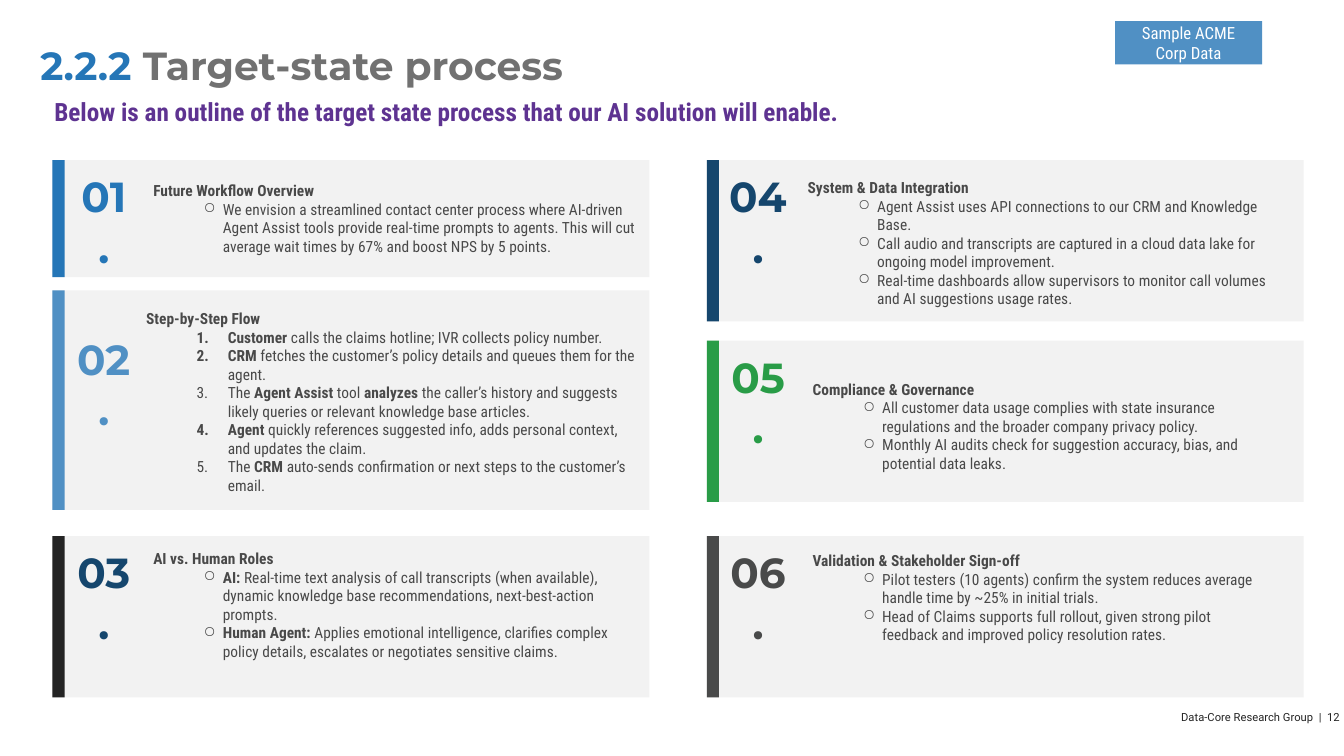
import dataclasses

import lxml.etree
import pptx
import pptx.dml.color
import pptx.enum.shapes
import pptx.enum.text
import pptx.oxml.ns
import pptx.util

Inches = pptx.util.Inches
RGBColor = pptx.dml.color.RGBColor
Align = pptx.enum.text.PP_ALIGN
Anchor = pptx.enum.text.MSO_ANCHOR

BLUE = RGBColor(0x25, 0x76, 0xB7)
LIGHT_BLUE = RGBColor(0x50, 0x90, 0xC4)
NAVY = RGBColor(0x15, 0x46, 0x6D)
GREEN = RGBColor(0x29, 0x9C, 0x47)
PURPLE = RGBColor(0x5E, 0x33, 0x91)
BLACK = RGBColor(0x24, 0x24, 0x24)
DARK_GRAY = RGBColor(0x49, 0x4A, 0x4A)
TEXT_GRAY = RGBColor(0x49, 0x49, 0x49)
TITLE_GRAY = RGBColor(0x71, 0x71, 0x71)
PANEL_GRAY = RGBColor(0xF2, 0xF2, 0xF2)
WHITE = RGBColor(0xFF, 0xFF, 0xFF)

HEADING_FONT = "Montserrat"
BODY_FONT = "Roboto Condensed"
LEFT_COLUMN, RIGHT_COLUMN = 0.52, 7.01
PANEL_WIDTH = 5.92
NUMBER_CENTER = 0.51
NUMBER_HEIGHT = 0.61
ROW_TOP, ROW_HEIGHT = 1.59, 1.6
LAST_ROW_TOP = 5.32


@dataclasses.dataclass
class Panel:
    """A numbered card; text and number places are offsets from its corner."""
    number: str
    left: float
    top: float
    accent: RGBColor
    text_box: tuple
    heading: str
    items: list
    number_width: float = 0.83
    height: float = ROW_HEIGHT
    number_top: float = 0.3
    number_color: RGBColor = None
    number_wraps: bool = True
    numbered: bool = False


PANELS = [
    Panel("01.", LEFT_COLUMN, ROW_TOP, BLUE, (1, 0.21, 4.82, 0.74),
          "Future Workflow Overview",
          ["We envision a streamlined contact center process where AI-driven Agent Assist tools "
           "provide real-time prompts to agents. This will cut average wait times by 67% and "
           "boost NPS by 5 points."],
          number_width=0.74, height=1.16),
    Panel("02.", LEFT_COLUMN, 2.88, LIGHT_BLUE, (0.93, 0.19, 4.9, 1.85),
          "Step-by-Step Flow",
          ["**Customer** calls the claims hotline; IVR collects policy number.",
           "**CRM** fetches the customer’s policy details and queues them for the agent.",
           "The **Agent Assist** tool **analyzes** the caller’s history and suggests likely "
           "queries or relevant knowledge base articles.",
           "**Agent** quickly references suggested info, adds personal context, and updates "
           "the claim.",
           "The **CRM** auto-sends confirmation or next steps to the customer’s email."],
          height=2.18, number_top=0.62, numbered=True),
    Panel("03.", LEFT_COLUMN, LAST_ROW_TOP, BLACK, (1, 0.13, 4.82, 1.13),
          "AI vs. Human Roles",
          ["**AI: **Real-time text analysis of call transcripts (when available), dynamic "
           "knowledge base recommendations, next-best-action prompts.",
           "**Human Agent: **Applies emotional intelligence, clarifies complex policy details, "
           "escalates or negotiates sensitive claims."],
          number_color=NAVY, number_wraps=False),
    Panel("04.", RIGHT_COLUMN, ROW_TOP, NAVY, (1, 0.18, 4.62, 1.3),
          "System & Data Integration",
          ["Agent Assist uses API connections to our CRM and Knowledge Base.",
           "Call audio and transcripts are captured in a cloud data lake for ongoing model "
           "improvement.",
           "Real-time dashboards allow supervisors to monitor call volumes and AI suggestions "
           "usage rates."],
          number_width=0.88),
    Panel("05.", RIGHT_COLUMN, 3.38, GREEN, (1.05, 0.39, 4.54, 0.93),
          "Compliance & Governance",
          ["All customer data usage complies with state insurance regulations and the broader "
           "company privacy policy.",
           "Monthly AI audits check for suggestion accuracy, bias, and potential data leaks."]),
    Panel("06.", RIGHT_COLUMN, LAST_ROW_TOP, DARK_GRAY, (1.05, 0.15, 4.54, 0.93),
          "Validation & Stakeholder Sign-off",
          ["Pilot testers (10 agents) confirm the system reduces average handle time by ~25% in "
           "initial trials.",
           "Head of Claims supports full rollout, given strong pilot feedback and improved "
           "policy resolution rates."],
          number_width=0.85),
]


def set_attributes(target, values):
    for name, value in values.items():
        setattr(target, name, value)


def set_insets(frame, horizontal, vertical=0):
    set_attributes(frame, {"margin_left": Inches(horizontal), "margin_right": Inches(horizontal),
                           "margin_top": Inches(vertical), "margin_bottom": Inches(vertical)})


def add_run(paragraph, text, size, color, bold=False, font=BODY_FONT):
    run = paragraph.add_run()
    run.text = text
    set_attributes(run.font, {"name": font, "size": pptx.util.Pt(size), "bold": bold})
    run.font.color.rgb = color


def add_rectangle(slide, box, color):
    shape = slide.shapes.add_shape(pptx.enum.shapes.MSO_SHAPE.RECTANGLE, *map(Inches, box))
    shape.shadow.inherit = False
    shape.fill.solid()
    shape.fill.fore_color.rgb = color
    shape.line.fill.background()
    return shape


def add_text_frame(slide, box):
    frame = slide.shapes.add_textbox(*map(Inches, box)).text_frame
    frame.word_wrap = True
    return frame


def add_list_marker(paragraph, numbered):
    properties = paragraph._p.get_or_add_pPr()
    margin, hanging = (0.81, 0.31) if numbered else (0.69, 0.19)
    properties.set("marL", str(Inches(margin)))
    properties.set("indent", str(-Inches(hanging)))
    tag, name, value = (("a:buAutoNum", "type", "arabicPeriod") if numbered
                        else ("a:buChar", "char", "○"))
    lxml.etree.SubElement(properties, pptx.oxml.ns.qn(tag)).set(name, value)


def add_panel_text(slide, panel):
    x, y, width, height = panel.text_box
    frame = add_text_frame(slide, (panel.left + x, panel.top + y, width, height))
    set_insets(frame, 0)
    add_run(frame.paragraphs[0], panel.heading, 11, TEXT_GRAY, bold=True)
    for item in panel.items:
        paragraph = frame.add_paragraph()
        paragraph.level = 1
        add_list_marker(paragraph, panel.numbered)
        for position, text in enumerate(item.split("**")):
            if text:
                add_run(paragraph, text, 11, TEXT_GRAY, bold=position % 2 == 1)


def add_panel_number(slide, panel):
    left = panel.left + NUMBER_CENTER - panel.number_width / 2
    frame = add_text_frame(slide, (left, panel.top + panel.number_top,
                                   panel.number_width, NUMBER_HEIGHT))
    set_insets(frame, 0.12, 0.05)
    set_attributes(frame, {"word_wrap": panel.number_wraps, "vertical_anchor": Anchor.MIDDLE})
    paragraph = frame.paragraphs[0]
    paragraph.alignment = Align.CENTER
    add_run(paragraph, panel.number, 30, panel.number_color or panel.accent, True, HEADING_FONT)


def add_panel(slide, panel):
    add_rectangle(slide, (panel.left, panel.top, PANEL_WIDTH, panel.height), PANEL_GRAY)
    add_rectangle(slide, (panel.left, panel.top, 0.12, panel.height), panel.accent)
    add_panel_text(slide, panel)
    add_panel_number(slide, panel)


def add_title(slide):
    title = slide.shapes.title
    set_attributes(title, {"left": Inches(0.4), "top": Inches(0.46),
                           "width": Inches(7.61), "height": Inches(0.43)})
    frame = title.text_frame
    set_insets(frame, 0)
    set_attributes(frame, {"vertical_anchor": Anchor.TOP, "word_wrap": True,
                           "auto_size": pptx.enum.text.MSO_AUTO_SIZE.NONE})
    paragraph = frame.paragraphs[0]
    set_attributes(paragraph, {"alignment": Align.LEFT, "line_spacing": 0.9})
    add_run(paragraph, "2.2.2", 28, BLUE, True, HEADING_FONT)
    add_run(paragraph, " Target-state process", 28, TITLE_GRAY, True, HEADING_FONT)


def add_sample_tag(slide):
    frame = add_rectangle(slide, (11.06, 0.21, 1.46, 0.43), LIGHT_BLUE).text_frame
    set_attributes(frame, {"word_wrap": True, "vertical_anchor": Anchor.MIDDLE})
    frame.paragraphs[0].alignment = Align.CENTER
    add_run(frame.paragraphs[0], "Sample ACME Corp Data", 12, WHITE)


def add_footer(slide):
    frame = add_text_frame(slide, (9.63, 7.05, 3.76, 0.13))
    set_insets(frame, 0)
    frame.margin_right = Inches(0.1)
    frame.paragraphs[0].alignment = Align.RIGHT
    add_run(frame.paragraphs[0], "Data-Core Research Group  |  12", 8, BLACK, font="Roboto")


def main():
    presentation = pptx.Presentation()
    presentation.slide_width = Inches(13.33)
    presentation.slide_height = Inches(7.5)
    slide = presentation.slides.add_slide(presentation.slide_layouts[5])
    add_footer(slide)
    add_sample_tag(slide)
    add_title(slide)
    subtitle = add_text_frame(slide, (0.44, 0.91, 11.96, 0.4))
    add_run(subtitle.paragraphs[0], "Below is an outline of the target state process that our "
            "AI solution will enable.", 18, PURPLE, bold=True)
    for panel in PANELS:
        add_panel(slide, panel)
    presentation.save("out.pptx")


if __name__ == "__main__":
    main()
